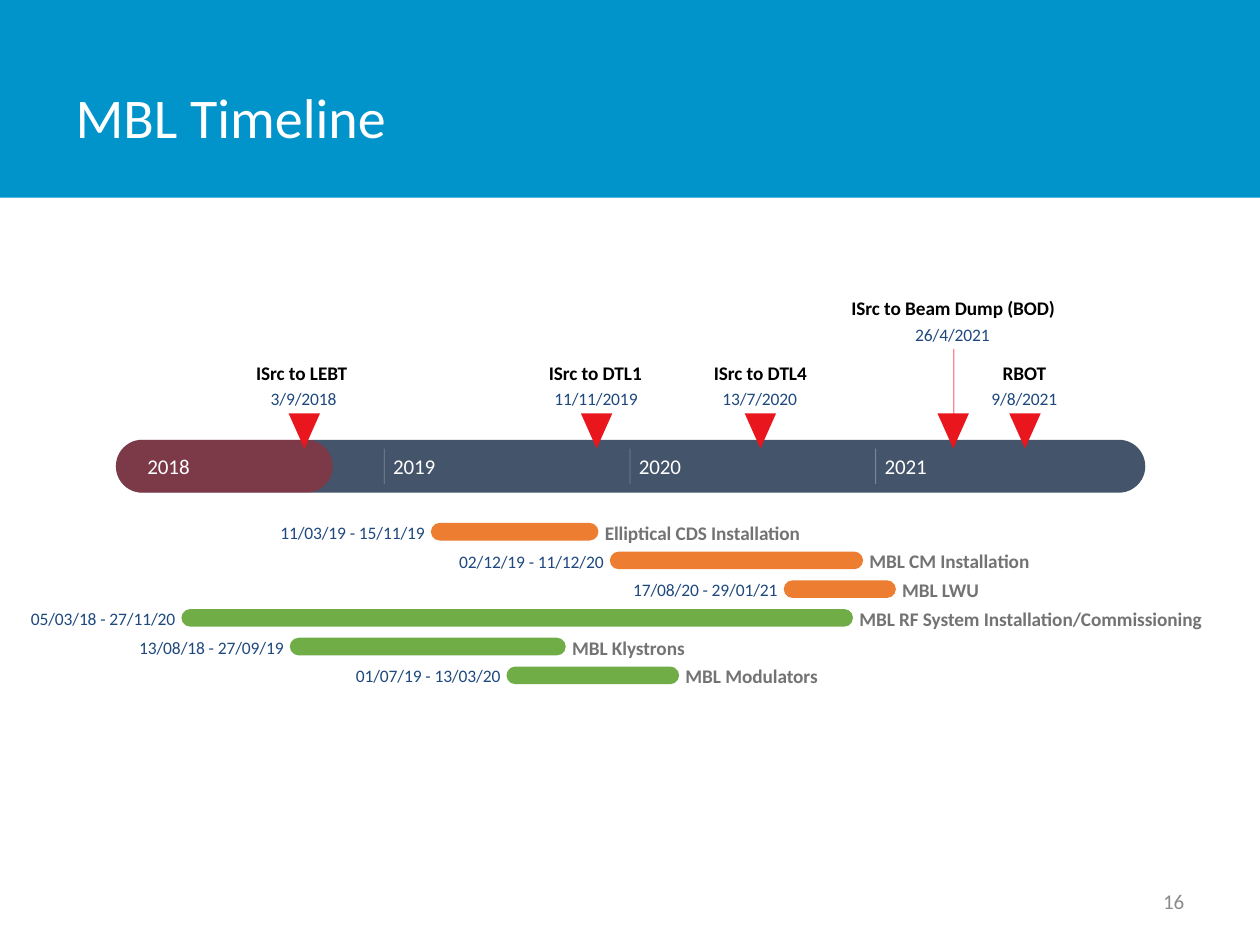
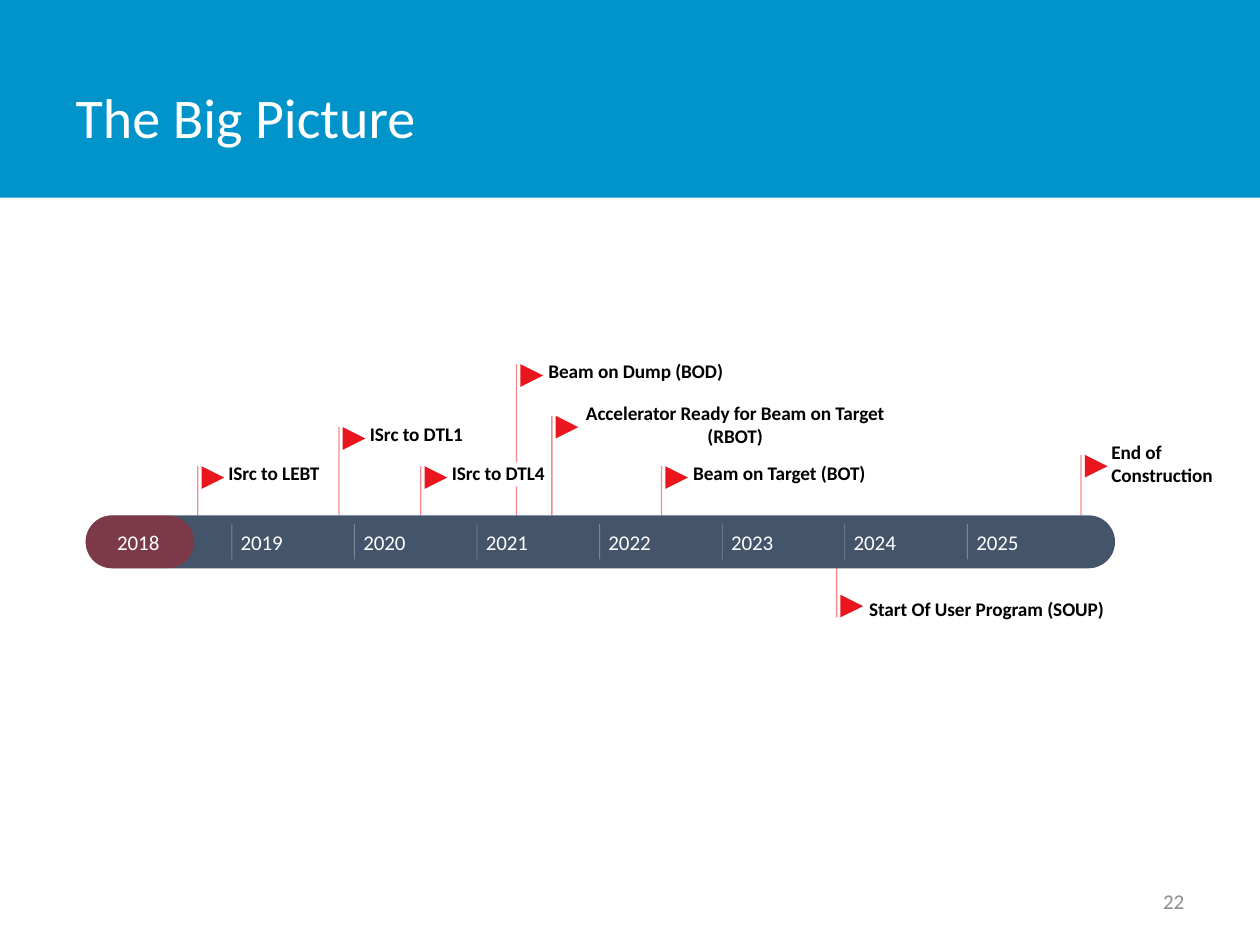
from lxml.etree import SubElement
from pptx import Presentation
from pptx.dml.color import RGBColor
from pptx.enum.shapes import MSO_CONNECTOR, MSO_SHAPE
from pptx.enum.text import MSO_ANCHOR, PP_ALIGN
from pptx.oxml.ns import qn
from pptx.util import Inches, Pt

COLORS = {
    "band": "0094CA", "white": "FFFFFF", "number": "8C8C8C", "bar": "44546A",
    "elapsed": "FF0000", "marker": "EA161E", "label": "000000", "date": "1F497E",
    "task": "737373", "installation": "ED7D31", "rf": "70AD47",
}
FONT = "Calibri"


def add_text(page, text, left, top, width, height, size, color,
             bold=False, align=PP_ALIGN.LEFT):
    box = page.shapes.add_textbox(Inches(left), Inches(top), Inches(width), Inches(height))
    frame = box.text_frame
    frame.margin_left = frame.margin_right = frame.margin_top = frame.margin_bottom = 0
    frame.vertical_anchor = MSO_ANCHOR.MIDDLE
    frame.word_wrap = True
    para = frame.paragraphs[0]
    para.alignment = align
    span = para.add_run()
    span.text = text
    span._r.get_or_add_rPr().set("spc", "-5")
    para.font.name = FONT
    para.font.size = Pt(size)
    para.font.bold = bold
    para.font.color.rgb = RGBColor.from_string(COLORS[color])


def add_filled(page, kind, left, top, width, height, color, rotation=0):
    shape = page.shapes.add_shape(kind, Inches(left), Inches(top), Inches(width), Inches(height))
    shape.shadow.inherit = False
    shape.fill.solid()
    shape.fill.fore_color.rgb = RGBColor.from_string(COLORS[color])
    shape.line.fill.background()
    shape.rotation = rotation
    if kind == MSO_SHAPE.ROUNDED_RECTANGLE:
        shape.adjustments[0] = 0.5
    return shape


milestones = [
    ("ISrc to LEBT", "3/9/2018", 2.41, 2.86, 2.03, 0.73),
    ("ISrc to DTL1", "11/11/2019", 4.73, 2.86, 4.35, 0.75),
    ("ISrc to DTL4", "13/7/2020", 6.03, 2.86, 5.66, 0.75),
    ("ISrc to Beam Dump (BOD)", "26/4/2021", 7.56, 2.35, 6.74, 1.65),
    ("RBOT", "9/8/2021", 8.13, 2.86, 7.94, 0.38),
]
tasks = [
    ("Elliptical CDS Installation", "11/03/19 - 15/11/19", 3.42, 1.33, 1.6, "installation"),
    ("MBL CM Installation", "02/12/19 - 11/12/20", 4.84, 2.01, 1.31, "installation"),
    ("MBL LWU", "17/08/20 - 29/01/21", 6.22, 0.89, 0.64, "installation"),
    ("MBL RF System Installation/Commissioning", "05/03/18 - 27/11/20", 1.44, 5.33, 2.8, "rf"),
    ("MBL Klystrons", "13/08/18 - 27/09/19", 2.3, 2.19, 0.92, "rf"),
    ("MBL Modulators", "01/07/19 - 13/03/20", 4.02, 1.37, 1.09, "rf"),
]
flags = [
    ("ISrc to LEBT", 1.57, 3.7, 3.66, 0.73, 0.19, [(3.7, 4.09)]),
    ("ISrc to DTL1", 2.69, 3.39, 3.35, 0.75, 0.19, [(3.39, 4.09)]),
    ("ISrc to DTL4", 3.34, 3.7, 3.66, 0.75, 0.19, [(3.7, 4.09)]),
    ("Beam on Dump (BOD)", 4.1, 2.89, 2.85, 1.41, 0.19, [(2.89, 3.67), (3.86, 4.09)]),
    ("Accelerator Ready for Beam on Target (RBOT)", 4.38, 3.3, 3.18, 2.43, 0.37, [(3.3, 4.09)]),
    ("Beam on Target (BOT)", 5.25, 3.7, 3.66, 1.39, 0.19, [(3.7, 4.09)]),
    ("End of Construction", 8.58, 3.61, 3.49, 0.83, 0.37, [(3.61, 4.09)]),
    ("Start Of User Program (SOUP)", 6.64, 4.72, 4.74, 1.9, 0.19, [(4.51, 4.9)]),
]
flag_stems = [(flag[1], start, end) for flag in flags for start, end in flag[-1]]
timelines = [
    ("MBL Timeline", "16", 0.92, 3.49, 1.72, 3.05, 1.95, range(2019, 2022), [(7.57, 2.77, 3.42)]),
    ("The Big Picture", "22", 0.68, 4.09, 0.86, 1.84, 0.973, range(2019, 2026), flag_stems),
]

deck = Presentation()
deck.slide_width = Inches(10)
deck.slide_height = Inches(7.5)
pages = []

for heading, number, left, top, elapsed, first_tick, year_step, years, stems in timelines:
    page = deck.slides.add_slide(deck.slide_layouts[5])
    pages.append(page)
    band = add_filled(page, MSO_SHAPE.RECTANGLE, 0, 0, 10, 1.57, "band")
    page.shapes._spTree.insert(2, band._element)

    title = page.shapes.title
    title.left, title.top = Inches(0.5), Inches(0.3)
    title.width, title.height = Inches(7.81), Inches(1.25)
    title.text_frame.text = heading
    title.text_frame.vertical_anchor = MSO_ANCHOR.MIDDLE
    para = title.text_frame.paragraphs[0]
    para.alignment = PP_ALIGN.LEFT
    para.font.name = FONT
    para.font.size = Pt(32)
    para.font.color.rgb = RGBColor.from_string(COLORS["white"])
    add_text(page, number, 7.17, 6.95, 2.23, 0.4, 12, "number", align=PP_ALIGN.RIGHT)

    add_filled(page, MSO_SHAPE.ROUNDED_RECTANGLE, left, top, 8.17, 0.42, "bar")
    progress = add_filled(page, MSO_SHAPE.ROUNDED_RECTANGLE, left, top, elapsed, 0.42, "elapsed")
    tint = progress._element.spPr.find(".//" + qn("a:srgbClr"))
    SubElement(tint, qn("a:alpha"), val="30000")

    add_text(page, "2018", left + 0.25, top + 0.11, 0.38, 0.2, 12, "white")
    lines = [(x, start, end, "marker", 0.75, 50) for x, start, end in stems]
    for index, year in enumerate(years):
        tick = first_tick + index * year_step
        lines.append((tick, top + 0.07, top + 0.35, "white", 0.5, 30))
        add_text(page, str(year), tick + 0.07, top + 0.11, 0.38, 0.2, 12, "white")

    for x, start, end, color, weight, opacity in lines:
        line = page.shapes.add_connector(
            MSO_CONNECTOR.STRAIGHT, Inches(x), Inches(start), Inches(x), Inches(end))
        line.line.width = Pt(weight)
        line.line.color.rgb = RGBColor.from_string(COLORS[color])
        properties = line._element.spPr
        tint = properties.find(".//" + qn("a:srgbClr"))
        SubElement(tint, qn("a:alpha"), val=str(opacity * 1000))
        SubElement(properties, qn("a:effectLst"))

mbl_page, big_picture_page = pages

for label, date, center, top, left, width in milestones:
    date_width = 0.07 * len(date)
    add_text(mbl_page, label, left, top, width, 0.19, 11, "label",
             bold=True, align=PP_ALIGN.CENTER)
    add_text(mbl_page, date, center - date_width / 2, top + 0.22, date_width, 0.17, 10, "date",
             align=PP_ALIGN.CENTER)
    add_filled(mbl_page, MSO_SHAPE.ISOSCELES_TRIANGLE, center - 0.12, 3.28, 0.25, 0.28,
               "marker", rotation=180)

for row, (label, dates, left, length, width, color) in enumerate(tasks):
    top = 4.15 + row * 1.14 / 5
    add_filled(mbl_page, MSO_SHAPE.ROUNDED_RECTANGLE, left, top, length, 0.14, color)
    add_text(mbl_page, dates, left - 1.25, top - 0.01, 1.2, 0.17, 10, "date",
             align=PP_ALIGN.RIGHT)
    add_text(mbl_page, label, left + length + 0.05, top - 0.02, width, 0.19, 11, "task", bold=True)

for label, x, flag_top, label_top, width, height, _ in flags:
    align = PP_ALIGN.LEFT if label == "End of Construction" else PP_ALIGN.CENTER
    add_text(big_picture_page, label, x + 0.24, label_top, width, height, 11, "label",
             bold=True, align=align)
    add_filled(big_picture_page, MSO_SHAPE.FLOWCHART_MERGE, x + 0.03, flag_top, 0.18, 0.18,
               "marker", rotation=270)

deck.save("out.pptx")
